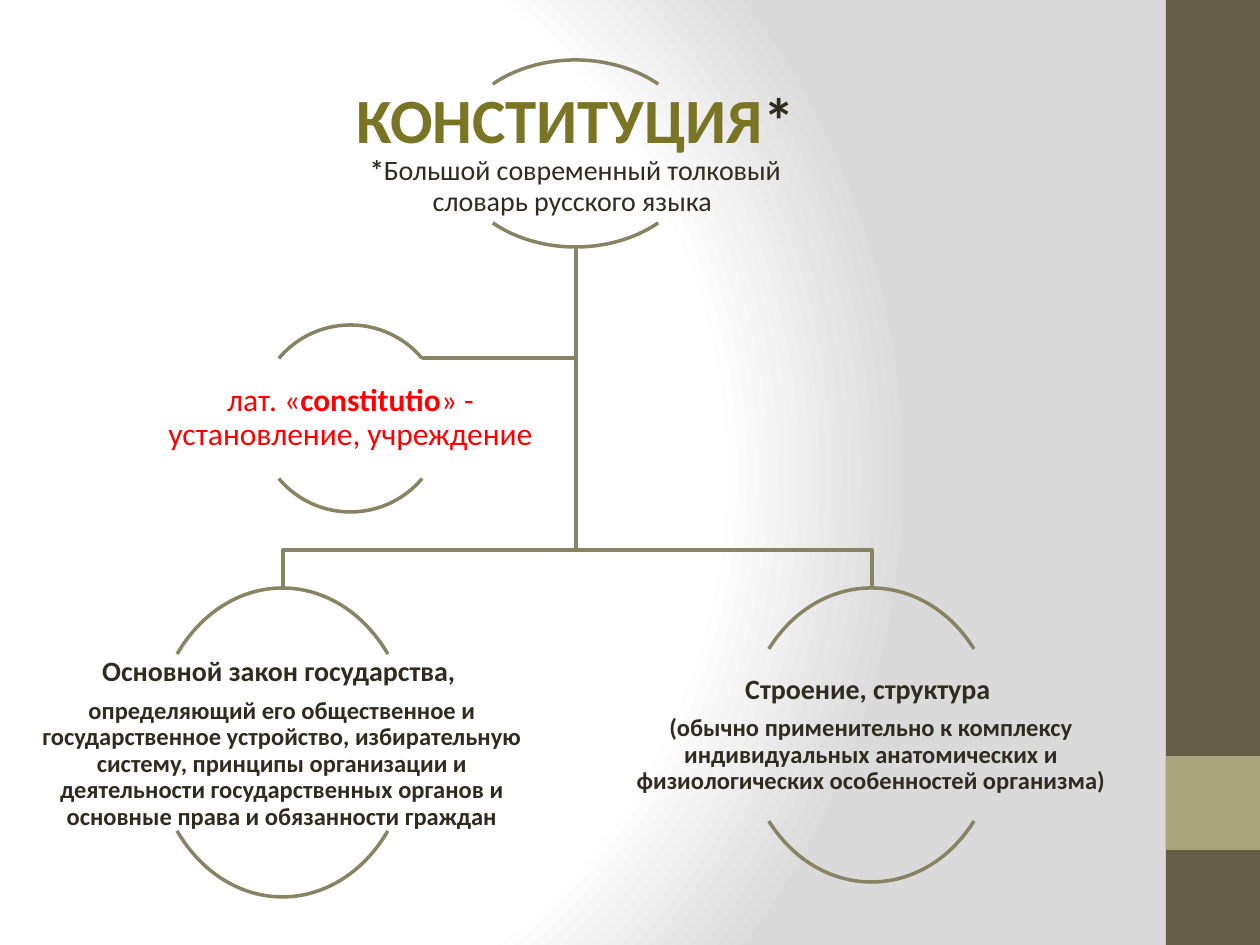
"""Build a slide with a tree diagram of the meanings of the word "конституция"."""
from lxml.etree import SubElement
from pptx import Presentation
from pptx.dml.color import RGBColor
from pptx.enum.shapes import MSO_SHAPE
from pptx.enum.text import MSO_ANCHOR, MSO_AUTO_SIZE, PP_ALIGN
from pptx.oxml import parse_xml
from pptx.oxml.ns import nsdecls, qn
from pptx.util import Emu, Pt

SCALE = 914400 / 126
COLORS = {
    "white": "FFFFFF", "gray": "DADADA", "brown": "675E47", "sage": "A9A57C",
    "line": "878463", "olive": "7A7425", "ink": "2F2B20", "red": "FF0000",
}


def px(*lengths):
    return [Emu(round(length * SCALE)) for length in lengths]


def write(para, text, size=16, color="ink", bold=False):
    span = para.add_run()
    span.text = text
    span.font.name = "Calibri"
    span.font.size = Pt(size)
    span.font.bold = bold
    span.font.color.rgb = RGBColor.from_string(COLORS[color])


deck = Presentation()
deck.slide_width, deck.slide_height = px(1260, 945)
page = deck.slides.add_slide(deck.slide_layouts[5])

page.background.fill.gradient()
gradient = page.element.find(".//" + qn("a:gradFill"))
stops = "".join(
    f'<a:gs pos="{position}"><a:srgbClr val="{COLORS[color]}"/></a:gs>'
    for position, color in [(0, "white"), (75000, "white"), (100000, "gray")]
)
gradient.getparent().replace(gradient, parse_xml(
    f'<a:gradFill {nsdecls("a")} rotWithShape="1"><a:gsLst>{stops}</a:gsLst>'
    '<a:path path="circle"><a:fillToRect l="20000" t="50000" r="100000" b="50000"/>'
    "</a:path></a:gradFill>"
))

for top, height, color in [(0, 945, "brown"), (756, 94, "sage")]:
    bar = page.shapes.add_shape(MSO_SHAPE.RECTANGLE, *px(1166, top, 94, height))
    bar.shadow.inherit = False
    bar.fill.solid()
    bar.fill.fore_color.rgb = RGBColor.from_string(COLORS[color])
    bar.line.fill.background()

outlines = []
for branch in [
    [(576, 358), (422, 358)],
    [(576, 550), (872, 550), (872, 588)],
    [(576, 550), (283, 550), (283, 588)],
]:
    builder = page.shapes.build_freeform(576, 247, scale=SCALE)
    builder.add_line_segments(branch, close=False)
    outlines.append(builder.convert_to_shape())

for circle in [
    (452, 60, 247, 187), (154, 588, 257, 309), (745, 588, 253, 294), (257, 325, 187, 187),
]:
    for start, end in [(132, 192), (24, 84)]:
        arc = page.shapes.add_shape(MSO_SHAPE.ARC, *px(*circle))
        arc.adjustments[0] = start
        arc.adjustments[1] = end
        outlines.append(arc)

for outline in outlines:
    outline.shadow.inherit = False
    outline.fill.background()
    outline.line.color.rgb = RGBColor.from_string(COLORS["line"])
    outline.line.width = Pt(2)

large = {"bold": True}
small = {"size": 14, "bold": True}
latin = {"size": 18, "color": "red"}
heading = {"size": 36, "bold": True}
nodes = [
    ((328, 93, 495, 120), 4, [[
        ("КОНСТИТУЦИЯ", {**heading, "color": "olive"}), ("*", heading), ("\n", heading),
        ("*", large), ("Большой современный толковый словарь русского языка ", {}),
    ]]),
    ((25, 645, 514, 198), 1, [
        [("Основной закон государства, ", large)],
        [("определяющий его общественное и государственное устройство, избирательную "
          "систему, принципы организации и деятельности государственных органов и "
          "основные права и обязанности граждан", small)],
    ]),
    ((617, 641, 508, 188), 1, [
        [("Строение, структура ", large)],
        [("(обычно применительно к комплексу индивидуальных анатомических и "
          "физиологических особенностей организма)", small)],
    ]),
    ((164, 358, 373, 120), 1, [[
        ("лат. «", latin), ("constitutio", {**latin, "bold": True}),
        ("» - установление, учреждение", latin),
    ]]),
]

for number, (place, inset, paragraphs) in enumerate(nodes):
    box = page.shapes.add_textbox(*px(*place)) if number else page.shapes.title
    box.left, box.top, box.width, box.height = px(*place)
    frame = box.text_frame
    frame.word_wrap = True
    frame.auto_size = MSO_AUTO_SIZE.NONE
    frame.vertical_anchor = MSO_ANCHOR.MIDDLE
    frame.margin_left, frame.margin_top, frame.margin_right, frame.margin_bottom = px(*[inset] * 4)
    for index, spans in enumerate(paragraphs):
        para = frame.add_paragraph() if index else frame.paragraphs[0]
        para.alignment = PP_ALIGN.CENTER
        para.line_spacing = 0.9
        para.space_before = Pt(0)
        para.space_after = Pt(6 if index < len(paragraphs) - 1 else 0)
        for text, style in spans:
            if text == "\n":
                para.add_line_break()
                SubElement(para._p[-1], qn("a:rPr"), sz=str(style["size"] * 100))
            else:
                write(para, text, **style)

deck.save("out.pptx")
